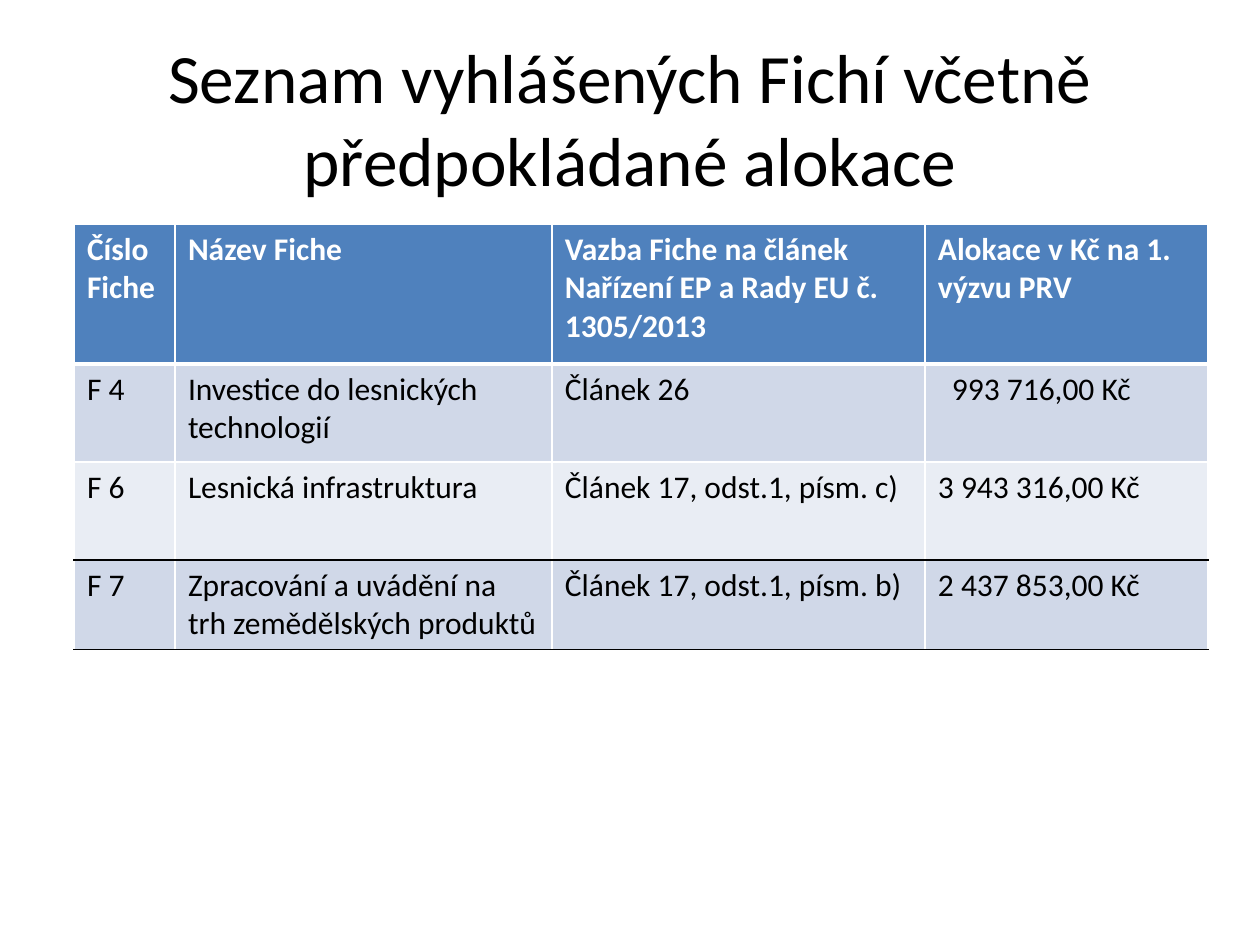
from lxml import etree
from pptx import Presentation
from pptx import util as u
from pptx.dml.color import RGBColor
from pptx.enum import text
from pptx.oxml.ns import qn

HEADING = "Seznam vyhlášených Fichí včetně předpokládané alokace"
ROWS = [
    ("Číslo Fiche", "Název Fiche",
     "Vazba Fiche na článek Nařízení EP a Rady EU č. 1305/2013",
     "Alokace v Kč na 1. výzvu PRV"),
    ("F 4", "Investice do lesnických technologií", "Článek 26", "993 716,00 Kč"),
    ("F 6", "Lesnická infrastruktura", "Článek 17, odst.1, písm. c)",
     "3 943 316,00 Kč"),
    ("F 7", "Zpracování a uvádění na trh zemědělských produktů",
     "Článek 17, odst.1, písm. b)", "2 437 853,00 Kč"),
]
COLUMN_WIDTHS = (101, 377, 373, 283)
ROW_HEIGHTS = (140, 98, 98, 62)
ROW_FILLS = ("4F81BD", "D0D8E8", "E9EDF4", "D0D8E8")
# Horizontal rules from the top edge to the bottom edge: colour, points
RULES = (("FFFFFF", 1), ("FFFFFF", 3), ("FFFFFF", 1), ("000000", 1), ("000000", 1))
SIDE_RULE = ("FFFFFF", 1)
CELL_MARGIN = 13
SHORT_AMOUNT_INDENT = 14


def px(n):
    return u.Emu(n * 914400 // 126)


def colour(value):
    return RGBColor.from_string(value)


def write(frame, words, size=18, color="000000", bold=False,
          align=text.PP_ALIGN.LEFT):
    paragraph = frame.paragraphs[0]
    paragraph.alignment = align
    run = paragraph.add_run()
    run.text = words
    run.font.name = "Calibri"
    run.font.size = u.Pt(size)
    run.font.bold = bold
    run.font.color.rgb = colour(color)


def border(cell, side, rule):
    value, points = rule
    line = etree.SubElement(cell._tc.get_or_add_tcPr(), qn(f"a:ln{side}"),
                            w=str(u.Pt(points)))
    fill = etree.SubElement(line, qn("a:solidFill"))
    etree.SubElement(fill, qn("a:srgbClr"), val=value)


deck = Presentation()
deck.slide_width, deck.slide_height = px(1260), px(945)
slide = deck.slides.add_slide(deck.slide_layouts[5])

# Heading
heading = slide.shapes.title
heading.left, heading.top, heading.width, heading.height = map(px, (63, 38, 1134, 158))
heading.text_frame.vertical_anchor = text.MSO_ANCHOR.MIDDLE
write(heading.text_frame, HEADING, size=39.6, align=text.PP_ALIGN.CENTER)

# Allocation table
allocations = slide.shapes.add_table(
    len(ROWS), len(COLUMN_WIDTHS), px(74), px(224),
    px(sum(COLUMN_WIDTHS)), px(sum(ROW_HEIGHTS))).table
for column, width in zip(allocations.columns, COLUMN_WIDTHS):
    column.width = px(width)
for row, height in zip(allocations.rows, ROW_HEIGHTS):
    row.height = px(height)

for r, entries in enumerate(ROWS):
    is_header = r == 0
    for c, entry in enumerate(entries):
        cell = allocations.cell(r, c)
        cell.margin_left = cell.margin_right = px(CELL_MARGIN)
        for side, rule in (("L", SIDE_RULE), ("R", SIDE_RULE),
                           ("T", RULES[r]), ("B", RULES[r + 1])):
            border(cell, side, rule)
        cell.fill.solid()
        cell.fill.fore_color.rgb = colour(ROW_FILLS[r])
        write(cell.text_frame, entry, bold=is_header,
              color="FFFFFF" if is_header else "000000")

# The six-digit amount is set in from the seven-digit ones
allocations.cell(1, 3).margin_left = px(CELL_MARGIN + SHORT_AMOUNT_INDENT)

deck.save("out.pptx")
